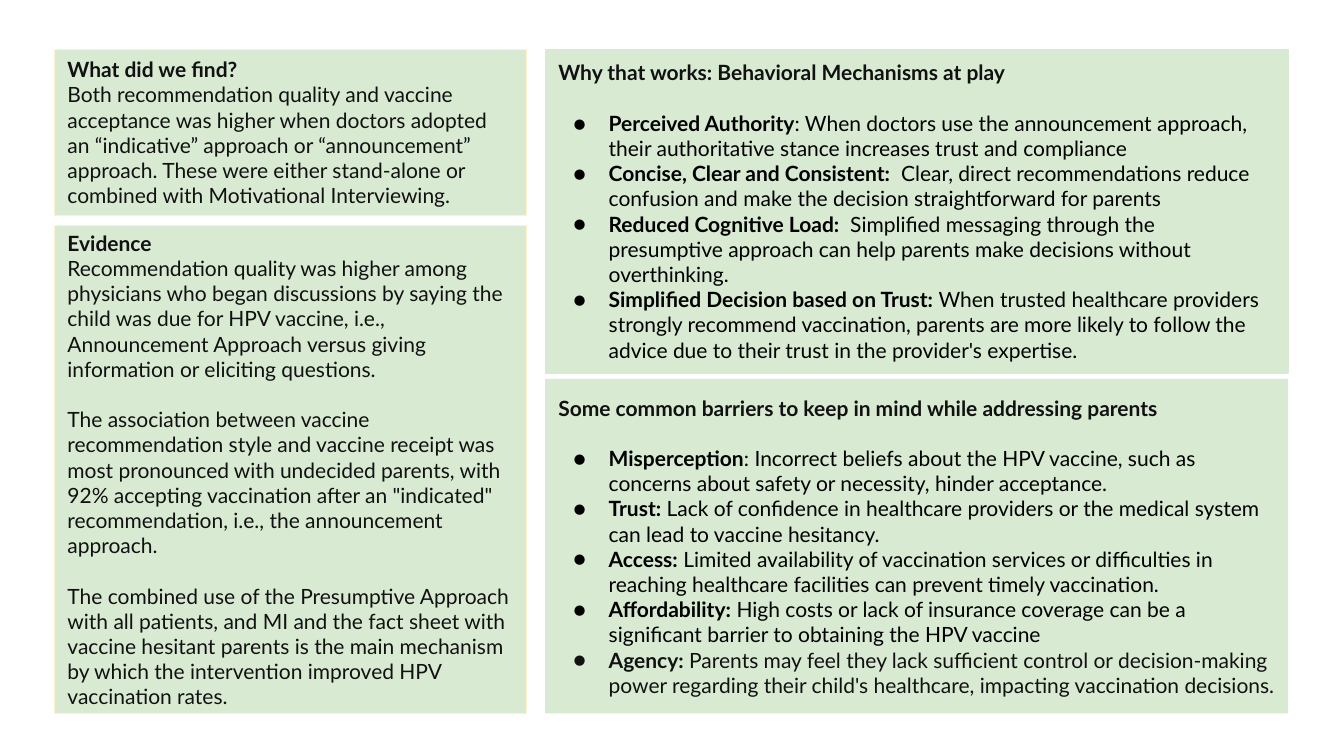
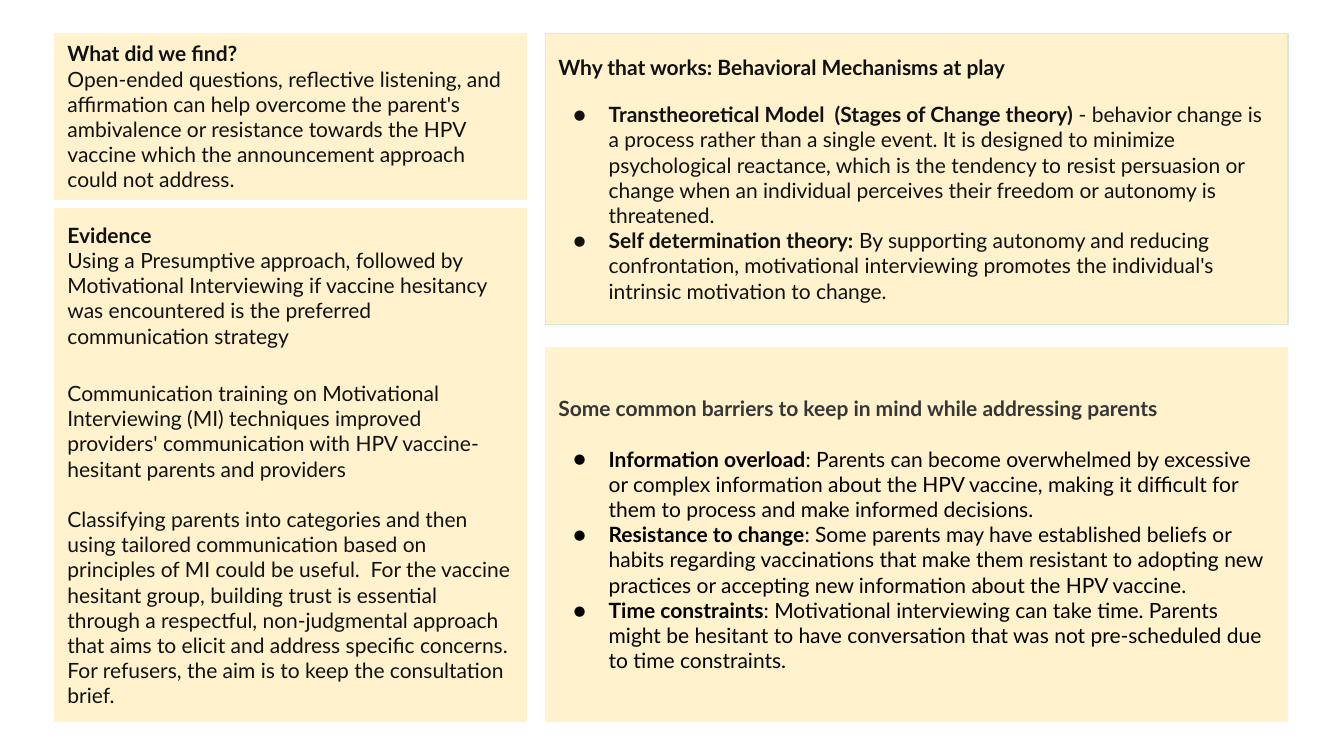
import dataclasses
import typing

import lxml.etree
import pptx
import pptx.dml.color
import pptx.enum.text
import pptx.oxml.ns
import pptx.util

Cm = pptx.util.Cm
Pt = pptx.util.Pt
RGB = pptx.dml.color.RGBColor
qn = pptx.oxml.ns.qn

INK = RGB(0x11, 0x11, 0x11)
BLACK = RGB(0x00, 0x00, 0x00)
GRAY = RGB(0x36, 0x36, 0x36)
GREEN = RGB(0xD9, 0xEA, 0xD3)
CREAM = RGB(0xFF, 0xF2, 0xCC)

FONT = "Lato"
SIZE = 15
GAP = 18
LEFT, RIGHT = (1.37, 11.91), (13.74, 18.72)

FOUND = "What did we find?"
PROOF = "Evidence"
WORKS = "Why that works: Behavioral Mechanisms at play"
BLOCKS = "Some common barriers to keep in mind while addressing parents"


@dataclasses.dataclass
class Item:
    text: str
    lead: str = ""
    gap: float = 0
    ink: RGB = INK


@dataclasses.dataclass
class Panel:
    head: str
    top: float
    base: float
    items: list[Item]
    ink: RGB = INK


@dataclasses.dataclass
class Page:
    fill: RGB
    panels: list[Panel]


COLUMNS = [
    (LEFT, CREAM),
    (LEFT, CREAM),
    (RIGHT, GREEN),
    (RIGHT, None),
]

PAGES = [
    Page(GREEN, [
        Panel(FOUND, 1.24, 5.43, [
            Item("Both recommendation quality and vaccine acceptance was higher when doctors adopted an “indicative” approach or “announcement” approach. These were either stand-alone or combined with Motivational Interviewing."),
        ]),
        Panel(PROOF, 5.69, 17.98, [
            Item("Recommendation quality was higher among physicians who began discussions by saying the child was due for HPV vaccine, i.e., Announcement Approach versus giving information or eliciting questions."),
            Item("The association between vaccine recommendation style and vaccine receipt was most pronounced with undecided parents, with 92% accepting vaccination after an \"indicated\" recommendation, i.e., the announcement approach.", gap=GAP),
            Item("The combined use of the Presumptive Approach with all patients, and MI and the fact sheet with vaccine hesitant parents is the main mechanism by which the intervention improved HPV vaccination rates.", gap=GAP),
        ]),
        Panel(WORKS, 1.24, 9.4, [
            Item(": When doctors use the announcement approach, their authoritative stance increases trust and compliance", "Perceived Authority", GAP, BLACK),
            Item("  Clear, direct recommendations reduce confusion and make the decision straightforward for parents", "Concise, Clear and Consistent:", ink=BLACK),
            Item("  Simplified messaging through the presumptive approach can help parents make decisions without overthinking.", "Reduced Cognitive Load:", ink=BLACK),
            Item(" When trusted healthcare providers strongly recommend vaccination, parents are more likely to follow the advice due to their trust in the provider's expertise.", "Simplified Decision based on Trust:", ink=BLACK),
        ]),
        Panel(BLOCKS, 9.55, 17.98, [
            Item(": Incorrect beliefs about the HPV vaccine, such as concerns about safety or necessity, hinder acceptance.", "Misperception", GAP, BLACK),
            Item(" Lack of confidence in healthcare providers or the medical system can lead to vaccine hesitancy.", "Trust:", ink=BLACK),
            Item(" Limited availability of vaccination services or difficulties in reaching healthcare facilities can prevent timely vaccination.", "Access:", ink=BLACK),
            Item(" High costs or lack of insurance coverage can be a significant barrier to obtaining the HPV vaccine", "Affordability:", ink=BLACK),
            Item(" Parents may feel they lack sufficient control or decision-making power regarding their child's healthcare, impacting vaccination decisions.", "Agency:"),
        ]),
    ]),
    Page(CREAM, [
        Panel(FOUND, 0.84, 5.03, [
            Item("Open-ended questions, reflective listening, and affirmation can help overcome the parent's ambivalence or resistance towards the HPV vaccine which the announcement approach could not address."),
        ]),
        Panel(PROOF, 5.26, 18.19, [
            Item("Using a Presumptive approach, followed by Motivational Interviewing if vaccine hesitancy was encountered is the preferred communication strategy"),
            Item("Communication training on Motivational Interviewing (MI) techniques improved providers' communication with HPV vaccine-hesitant parents and providers", gap=GAP + 5),
            Item("Classifying parents into categories and then using tailored communication based on principles of MI could be useful.  For the vaccine hesitant group, building trust is essential through a respectful, non-judgmental approach that aims to elicit and address specific concerns. For refusers, the aim is to keep the consultation brief.", gap=GAP),
        ]),
        Panel(WORKS, 0.84, 8.18, [
            Item(" - behavior change is a process rather than a single event. It is designed to minimize psychological reactance, which is the tendency to resist persuasion or change when an individual perceives their freedom or autonomy is threatened.", "Transtheoretical Model  (Stages of Change theory)", 15.6),
            Item(" By supporting autonomy and reducing confrontation, motivational interviewing promotes the individual's intrinsic motivation to change.", "Self determination theory:"),
        ]),
        Panel(BLOCKS, 8.74, 18.19, [
            Item(": Parents can become overwhelmed by excessive or complex information about the HPV vaccine, making it difficult for them to process and make informed decisions.", "Information overload", GAP, BLACK),
            Item(": Some parents may have established beliefs or habits regarding vaccinations that make them resistant to adopting new practices or accepting new information about the HPV vaccine.", "Resistance to change", ink=BLACK),
            Item(": Motivational interviewing can take time. Parents might be hesitant to have conversation that was not pre-scheduled due to time constraints.", "Time constraints", ink=BLACK),
        ], GRAY),
    ]),
]


def mark(para: typing.Any, ink: RGB, dot: bool) -> None:
    props = para._p.get_or_add_pPr()
    props.set("marL", str(Cm(1.27) if dot else 0))
    props.set("indent", str(Cm(-0.89) if dot else 0))
    if not dot:
        lxml.etree.SubElement(props, qn("a:buNone"))
        return
    tint = lxml.etree.SubElement(props, qn("a:buClr"))
    lxml.etree.SubElement(tint, qn("a:srgbClr"), val=str(ink))
    lxml.etree.SubElement(props, qn("a:buFont"), typeface=FONT)
    lxml.etree.SubElement(props, qn("a:buChar"), char="●")


def write(para: typing.Any, lead: str, text: str, ink: RGB, gap: float, dot: bool) -> None:
    mark(para, ink, dot)
    para.text = lead or text
    if lead and text:
        para.add_run().text = text
    para.alignment = pptx.enum.text.PP_ALIGN.LEFT
    para.space_before = Pt(gap)
    for spot, run in enumerate(para.runs):
        run.font.name = FONT
        run.font.size = Pt(SIZE)
        run.font.bold = bool(lead) and spot == 0
        run.font.color.rgb = ink


def draw(box: typing.Any, panel: Panel, fill: RGB, span: tuple[float, float], edge: RGB | None) -> None:
    box.left, box.width = Cm(span[0]), Cm(span[1])
    box.top, box.height = Cm(panel.top), Cm(panel.base - panel.top)
    box.fill.solid()
    box.fill.fore_color.rgb = fill
    if edge is None:
        box.line.fill.background()
    else:
        box.line.color.rgb = edge
        box.line.width = Pt(0.75)
    frame = box.text_frame
    frame.word_wrap = True
    frame.auto_size = pptx.enum.text.MSO_AUTO_SIZE.NONE
    frame.vertical_anchor = pptx.enum.text.MSO_ANCHOR.MIDDLE
    frame.margin_left = frame.margin_right = Cm(0.33)
    frame.margin_top = frame.margin_bottom = Cm(0.33)
    write(frame.paragraphs[0], panel.head, "", panel.ink, 0, False)
    for item in panel.items:
        write(frame.add_paragraph(), item.lead, item.text, item.ink, item.gap, bool(item.lead))


def main() -> None:
    deck = pptx.Presentation()
    deck.slide_width, deck.slide_height = Cm(33.87), Cm(19.05)
    layout = deck.slide_layouts.get_by_name("Comparison")
    for page in PAGES:
        slide = deck.slides.add_slide(layout)
        title = slide.shapes.title.element
        title.getparent().remove(title)
        for place, (panel, (span, edge)) in enumerate(zip(page.panels, COLUMNS), 1):
            draw(slide.placeholders[place], panel, page.fill, span, edge)
    deck.save("out.pptx")


if __name__ == "__main__":
    main()
